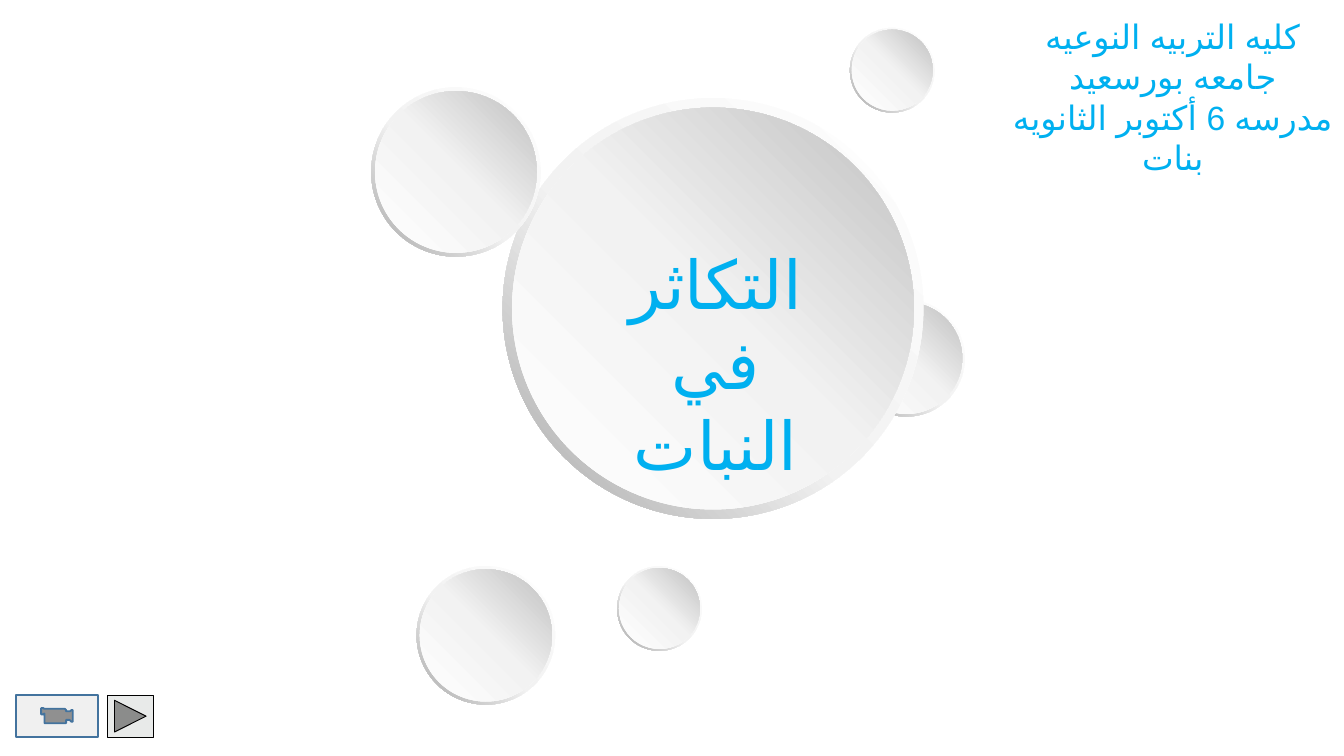
"""Build the title slide of a lesson on plant reproduction."""
from copy import deepcopy

from lxml.etree import SubElement
from pptx import Presentation
from pptx.dml.color import RGBColor
from pptx.enum.shapes import MSO_SHAPE
from pptx.enum.text import MSO_AUTO_SIZE, PP_ALIGN
from pptx.oxml.ns import qn
from pptx.util import Pt

WHITE = RGBColor(0xFF, 0xFF, 0xFF)
PALE = RGBColor(0xF2, 0xF2, 0xF2)
RIM_GRAY = RGBColor(0xA6, 0xA6, 0xA6)
FACE_GRAY = RGBColor(0xBF, 0xBF, 0xBF)
SKY = RGBColor(0x00, 0xB0, 0xF0)
NEXT_FILL = RGBColor(0xE8, 0xEA, 0xE9)
MOVIE_FILL = RGBColor(0xF0, 0xF0, 0xF0)
MOVIE_LINE = RGBColor(0x43, 0x73, 0x9E)
BLACK = RGBColor(0, 0, 0)
FACE_RATIO = 0.955


def add_disc(bubble, kind, left, top, size, middle, dark, angle):
    disc = bubble.shapes.add_shape(kind, Pt(left), Pt(top), Pt(size), Pt(size))
    disc.shadow.inherit = False
    disc.line.fill.background()
    disc.fill.gradient()
    disc.fill.gradient_angle = angle
    stop_list = disc.fill._fill._gradFill.gsLst
    stop_list.append(deepcopy(stop_list[-1]))
    stops = zip(disc.fill.gradient_stops, (0, middle, 1), (WHITE, PALE, dark))
    for stop, position, color in stops:
        stop.position = position
        stop.color.rgb = color
    return disc


def add_caption(left, top, width, height, lines, size):
    caption = slide.shapes.add_textbox(Pt(left), Pt(top), Pt(width), Pt(height))
    frame = caption.text_frame
    frame.word_wrap = True
    frame.auto_size = MSO_AUTO_SIZE.SHAPE_TO_FIT_TEXT
    frame.text = "\n".join(lines)
    for paragraph in frame.paragraphs:
        paragraph.alignment = PP_ALIGN.CENTER
        paragraph._p.get_or_add_pPr().set("rtl", "1")
        for run in paragraph.runs:
            run.font.name = "Calibri"
            run.font.size = Pt(size)
            run.font.color.rgb = SKY
            properties = run._r.get_or_add_rPr()
            properties.set("lang", "ar-EG")
            SubElement(properties, qn("a:cs")).set("typeface", "Arial")


presentation = Presentation()
presentation.slide_width = Pt(720)
presentation.slide_height = Pt(405)
slide = presentation.slides.add_slide(presentation.slide_layouts[6])

bubbles = [
    (455.3, 14.9, 45.4),
    (454.3, 160.6, 62.6),
    (269.3, 52.6, 225.4),
    (198.9, 46.8, 90.7),
    (223.2, 303.3, 74.2),
    (330.6, 303.3, 45.4),
]
for left, top, size in bubbles:
    bubble = slide.shapes.add_group_shape()
    rim = add_disc(bubble, MSO_SHAPE.DONUT, left, top, size, 0.55, RIM_GRAY, 225)
    rim.adjustments[0] = 0.049
    face_size = size * FACE_RATIO
    inset = (size - face_size) / 2
    add_disc(bubble, MSO_SHAPE.OVAL, left + inset, top + inset, face_size,
             0.51, FACE_GRAY, 45)

add_caption(310.3, 126, 146.2, 94.3, ["التكاثر في النبات"], 36)

buttons = [
    (MSO_SHAPE.ACTION_BUTTON_FORWARD_OR_NEXT, 57.6, 24.5, NEXT_FILL, BLACK, 0.5),
    (MSO_SHAPE.ACTION_BUTTON_MOVIE, 8.6, 43.9, MOVIE_FILL, MOVIE_LINE, 1),
]
for kind, left, width, fill, outline, weight in buttons:
    button = slide.shapes.add_shape(kind, Pt(left), Pt(372.4), Pt(width), Pt(22.6))
    button.shadow.inherit = False
    button.fill.solid()
    button.fill.fore_color.rgb = fill
    button.line.color.rgb = outline
    button.line.width = Pt(weight)

school = ["كليه التربيه النوعيه", "جامعه بورسعيد", "مدرسه 6 أكتوبر الثانويه بنات"]
add_caption(527.8, 5, 200.9, 72.7, school, 18)

presentation.save("out.pptx")
